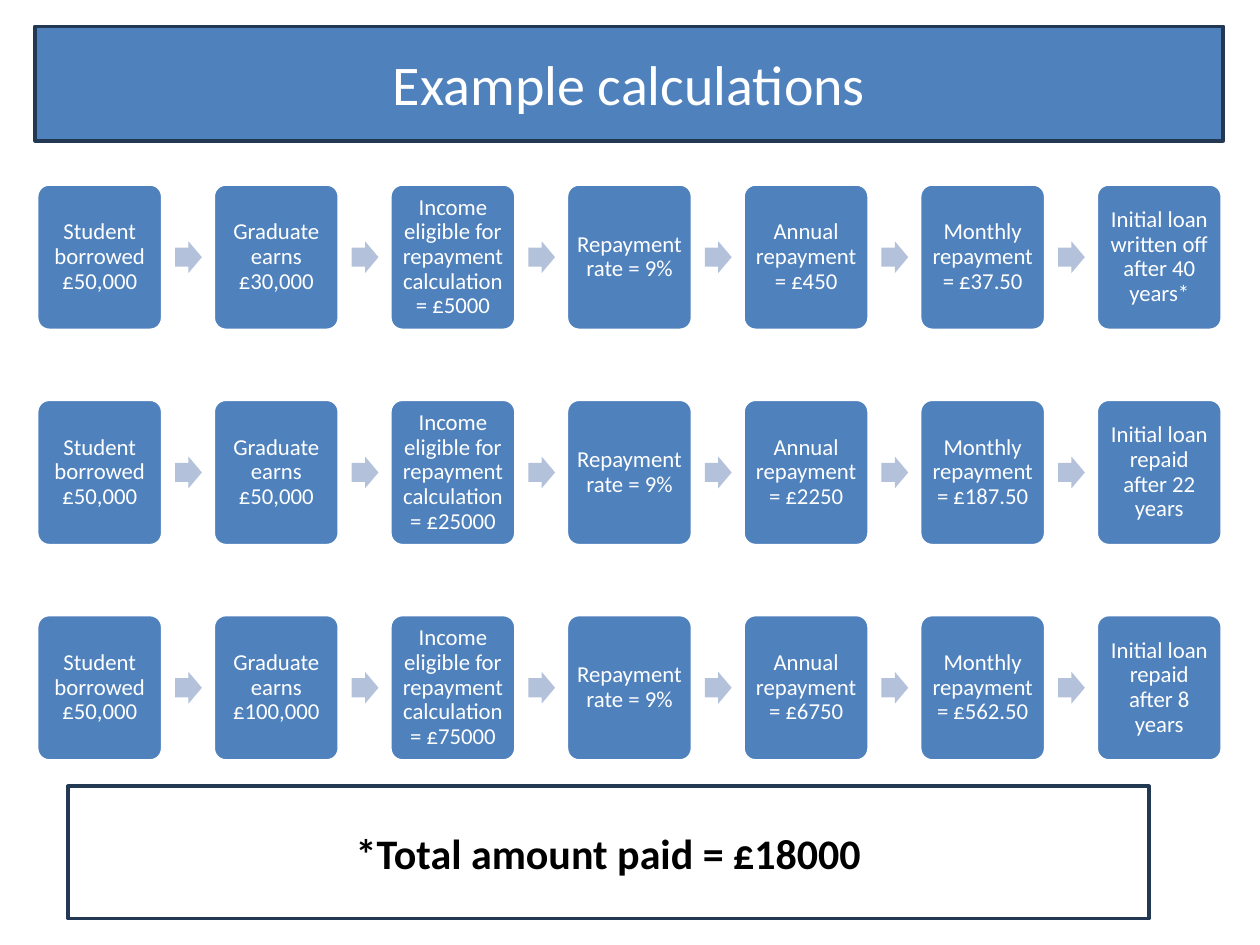
from pptx import Presentation
from pptx import util as u
from pptx.dml.color import RGBColor
from pptx.enum import shapes, text

COLOURS = {"blue": "4F81BD", "pale": "B3C1DB", "navy": "233953",
           "white": "FFFFFF", "black": "000000"}
FONT = "Calibri"

STEP_WIDTH, STEP_HEIGHT = 2.54, 2.95
ARROW_WIDTH, ARROW_HEIGHT, ARROW_OFFSET = 0.54, 0.64, 2.79
FIRST_LEFT, FIRST_TOP = 0.74, 3.71
COLUMN_PITCH, ROW_PITCH = 3.56, 4.34

# Earnings, eligible income, annual repayment, monthly repayment, outcome
EXAMPLES = [
    ("£30,000", "£5000", "£450", "£37.50", "written off after 40 years*"),
    ("£50,000", "£25000", "£2250", "£187.50", "repaid after 22 years"),
    ("£100,000", "£75000", "£6750", "£562.50", "repaid after 8 years"),
]


def colour(name):
    return RGBColor.from_string(COLOURS[name])


def paint(shape, fill=None, line=None):
    if fill:
        shape.fill.solid()
        shape.fill.fore_color.rgb = colour(fill)
    else:
        shape.fill.background()
    if line:
        shape.line.color.rgb = colour(line)
        shape.line.width = u.Pt(2)
    else:
        shape.line.fill.background()


def write(shape, words, size, font_colour, bold=False, spacing=1.0):
    """Put one centred paragraph in the middle of the shape."""
    frame = shape.text_frame
    frame.word_wrap = True
    frame.auto_size = text.MSO_AUTO_SIZE.NONE
    frame.vertical_anchor = text.MSO_ANCHOR.MIDDLE
    paragraph = frame.paragraphs[0]
    paragraph.alignment = text.PP_ALIGN.CENTER
    paragraph.line_spacing = spacing
    run = paragraph.add_run()
    run.text = words
    run.font.name = FONT
    run.font.size = u.Pt(size)
    run.font.bold = bold
    run.font.color.rgb = colour(font_colour)


def add_shape(slide, kind, left, top, width, height):
    shape = slide.shapes.add_shape(kind, u.Cm(left), u.Cm(top),
                                   u.Cm(width), u.Cm(height))
    shape.shadow.inherit = False
    return shape


def add_title(slide, words):
    title = slide.shapes.title
    title.left, title.top = u.Cm(0.71), u.Cm(0.53)
    title.width, title.height = u.Cm(23.95), u.Cm(2.31)
    paint(title, "blue", "navy")
    write(title, words, 32, "white")


def add_step(slide, left, top, words):
    step = add_shape(slide, shapes.MSO_SHAPE.ROUNDED_RECTANGLE,
                     left, top, STEP_WIDTH, STEP_HEIGHT)
    step.adjustments[0] = 0.1
    paint(step, "blue", "white")
    frame = step.text_frame
    frame.margin_left = frame.margin_right = u.Cm(0.12)
    frame.margin_top = frame.margin_bottom = u.Cm(0.12)
    write(step, words, 13, "white", spacing=0.9)


def add_arrow(slide, left, row_top):
    arrow = add_shape(slide, shapes.MSO_SHAPE.RIGHT_ARROW, left,
                      row_top + (STEP_HEIGHT - ARROW_HEIGHT) / 2,
                      ARROW_WIDTH, ARROW_HEIGHT)
    arrow.adjustments[0] = 0.6
    arrow.adjustments[1] = 0.5
    paint(arrow, "pale")


def add_process(slide, top, steps):
    """Draw a row of steps with an arrow between neighbours."""
    for column, words in enumerate(steps):
        left = FIRST_LEFT + column * COLUMN_PITCH
        if column:
            add_arrow(slide, left - COLUMN_PITCH + ARROW_OFFSET, top)
        add_step(slide, left, top, words)


def add_note(slide, words):
    note = add_shape(slide, shapes.MSO_SHAPE.RECTANGLE, 1.37, 15.85, 21.79, 2.67)
    paint(note, line="navy")
    write(note, words, 24, "black", bold=True)


def main():
    presentation = Presentation()
    presentation.slide_width, presentation.slide_height = u.Cm(25.4), u.Cm(19.05)
    slide = presentation.slides.add_slide(presentation.slide_layouts[5])
    add_title(slide, "Example calculations")
    for row, (earnings, eligible, annual, monthly, outcome) in enumerate(EXAMPLES):
        add_process(slide, FIRST_TOP + row * ROW_PITCH, [
            "Student borrowed £50,000",
            f"Graduate earns {earnings}",
            f"Income eligible for repayment calculation = {eligible}",
            "Repayment rate = 9%",
            f"Annual repayment = {annual}",
            f"Monthly repayment = {monthly}",
            f"Initial loan {outcome}",
        ])
    add_note(slide, "*Total amount paid = £18000")
    presentation.save("out.pptx")


if __name__ == "__main__":
    main()
